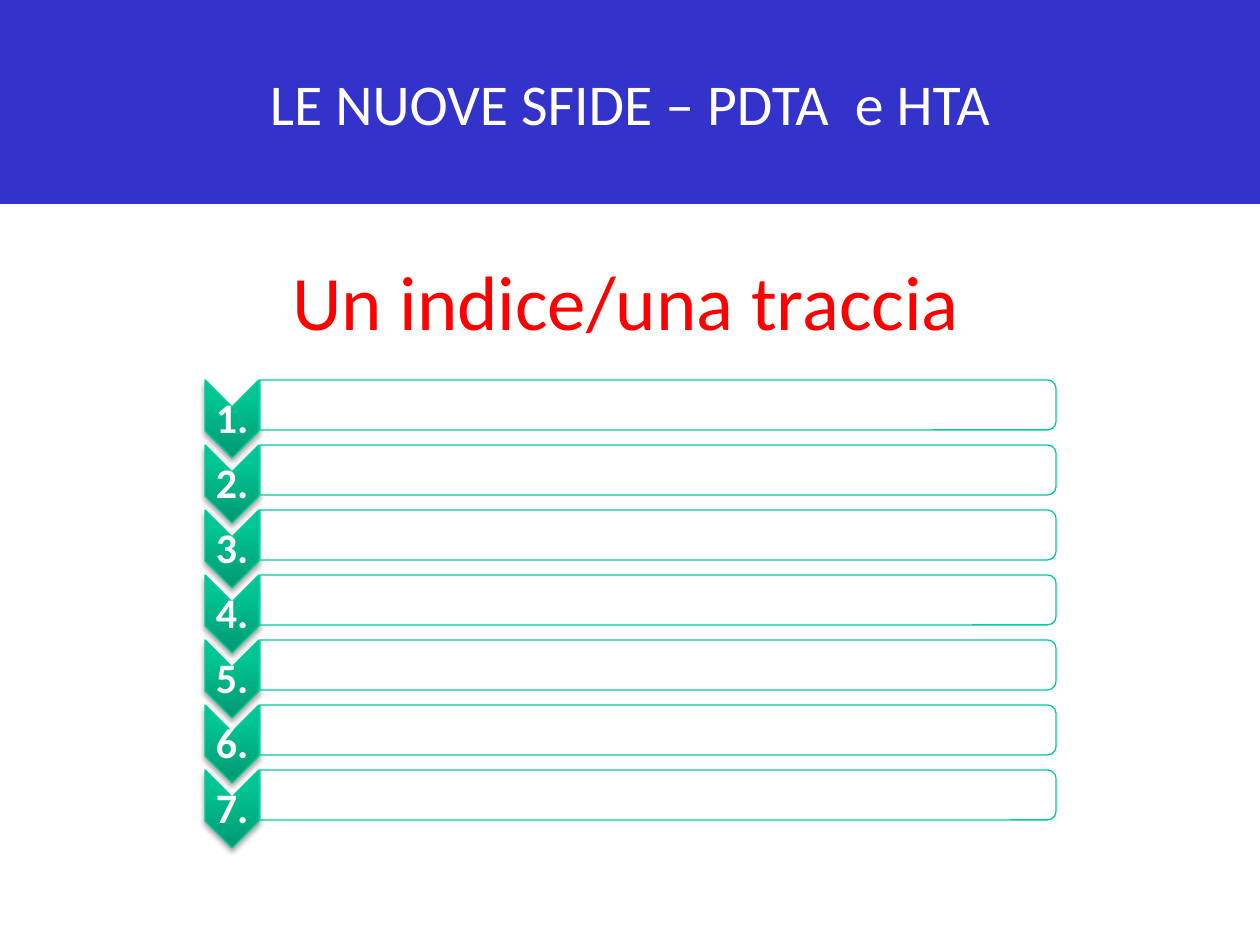
"""Build an index slide with seven numbered, empty rows."""
from dataclasses import dataclass

from lxml import etree
from pptx import Presentation
from pptx import util as u
from pptx.dml.color import RGBColor
from pptx.enum import shapes, text
from pptx.oxml import parse_xml

PX = u.Inches(1) / 126
NAMESPACE = "http://schemas.openxmlformats.org/drawingml/2006/main"
FONT = "Calibri"
WHITE, RED, BLUE, GREEN = "FFFFFF", "FF0000", "3333CC", "00CC99"
GRADIENT = [(0, "009872"), (80, "00C694"), (100, "00C795")]
ROW_COUNT, ROW_PITCH = 7, 65


@dataclass(frozen=True)
class Area:
    """A rectangle in px."""
    left: int
    top: int
    width: int
    height: int

    def emu(self) -> list[u.Emu]:
        """Return left, top, width and height in EMU."""
        return [px(side) for side in (self.left, self.top, self.width, self.height)]

    def upright(self) -> "Area":
        """Return the unturned frame that fills this area after a quarter turn."""
        shift = (self.width - self.height) // 2
        return Area(self.left + shift, self.top - shift, self.height, self.width)


@dataclass(frozen=True)
class Row:
    """One numbered row of the index."""
    number: int
    top: int


def px(length: int) -> u.Emu:
    """Turn px into EMU."""
    return u.Emu(round(length * PX))


def color(value: str) -> RGBColor:
    """Turn a hex string into a colour."""
    return RGBColor.from_string(value)


def write(box, words: str, size: int, ink: str, inset: int, bold: bool = False):
    """Put one centred line of text into a box and return its paragraph."""
    frame = box.text_frame
    frame.word_wrap = True
    frame.vertical_anchor = text.MSO_ANCHOR.MIDDLE
    frame.margin_left = frame.margin_right = px(inset)
    frame.margin_top = frame.margin_bottom = px((inset + 1) // 2)
    para = frame.paragraphs[0]
    para.alignment = text.PP_ALIGN.CENTER
    span = para.add_run()
    span.text = words
    span.font.name = FONT
    span.font.size = u.Pt(size)
    span.font.bold = bold
    span.font.color.rgb = color(ink)
    return para


def add_turned(parent, kind, area: Area):
    """Add a green-edged shape, turned by 90 degrees, that covers an area."""
    box = parent.add_shape(kind, *area.upright().emu())
    box.rotation = 90
    box.shadow.inherit = False
    box.fill.solid()
    box.fill.fore_color.rgb = color(WHITE)
    box.line.color.rgb = color(GREEN)
    box.line.width = u.Pt(0.75)
    return box


def shade(box) -> None:
    """Give a shape the green gradient and a soft shadow below."""
    stops = "".join(
        f'<a:gs pos="{place * 1000}"><a:srgbClr val="{value}"/></a:gs>'
        for place, value in GRADIENT
    )
    properties = box._element.spPr
    solid = properties.find(f"{{{NAMESPACE}}}solidFill")
    properties.replace(solid, parse_xml(
        f'<a:gradFill xmlns:a="{NAMESPACE}" rotWithShape="0"><a:gsLst>{stops}</a:gsLst>'
        '<a:lin ang="16200000" scaled="0"/></a:gradFill>'
    ))
    effects = properties.find(f"{{{NAMESPACE}}}effectLst")
    shadow = etree.SubElement(
        effects, f"{{{NAMESPACE}}}outerShdw", blurRad=str(u.Pt(3.1)),
        dist=str(u.Pt(1.8)), dir="5400000", rotWithShape="0",
    )
    ink = etree.SubElement(shadow, f"{{{NAMESPACE}}}srgbClr", val="000000")
    etree.SubElement(ink, f"{{{NAMESPACE}}}alpha", val="35000")


def add_row(parent, row: Row) -> None:
    """Draw a row: chevron, number and empty bar."""
    chevron = add_turned(parent, shapes.MSO_SHAPE.CHEVRON, Area(205, row.top, 54, 78))
    shade(chevron)
    label = parent.add_textbox(*Area(205, row.top + 28, 54, 23).emu())
    para = write(label, f"{row.number}.", 24, WHITE, 2, bold=True)
    para.line_spacing = 0.9
    bar = Area(260, row.top, 796, 50)
    add_turned(parent, shapes.MSO_SHAPE.ROUND_2_SAME_RECTANGLE, bar)


def add_banner(page, words: str) -> None:
    """Draw the blue band across the top."""
    band = page.shapes.add_shape(shapes.MSO_SHAPE.RECTANGLE, *Area(0, 0, 1260, 204).emu())
    band.shadow.inherit = False
    band.fill.solid()
    band.fill.fore_color.rgb = color(BLUE)
    band.line.fill.background()
    write(band, words, 33, WHITE, 9)


def main() -> None:
    """Build and save the deck."""
    deck = Presentation()
    deck.slide_width, deck.slide_height = px(1260), px(945)
    page = deck.slides.add_slide(deck.slide_layouts[5])
    title = page.shapes.title
    title.left, title.top, title.width, title.height = Area(201, 241, 850, 117).emu()
    write(title, "Un indice/una traccia", 44, RED, 13)
    index = page.shapes.add_group_shape()
    for step in range(ROW_COUNT):
        add_row(index.shapes, Row(step + 1, 380 + step * ROW_PITCH))
    add_banner(page, "LE NUOVE SFIDE – PDTA  e HTA")
    deck.save("out.pptx")


if __name__ == "__main__":
    main()
